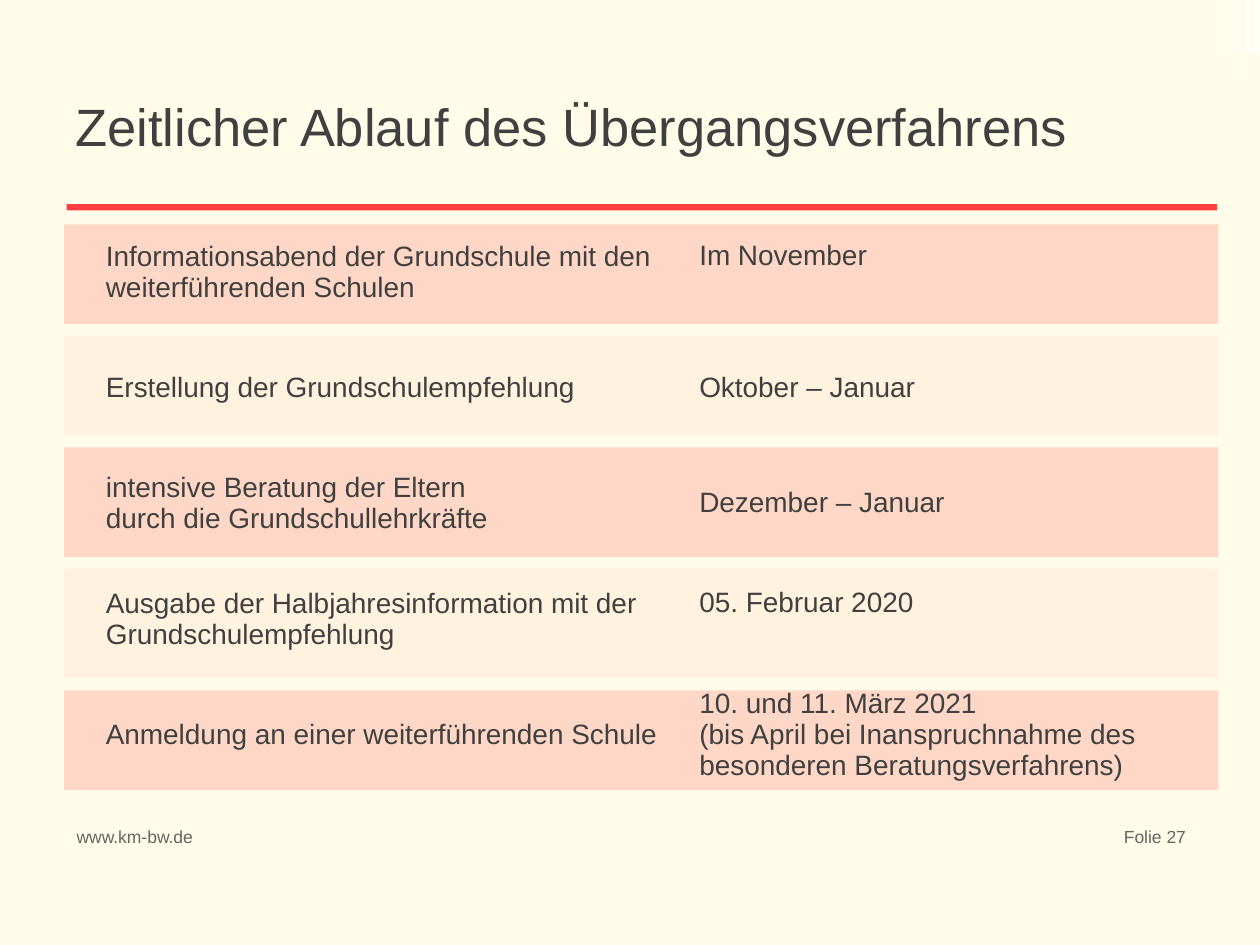
from pptx import Presentation
from pptx.dml.color import RGBColor
from pptx.enum.shapes import MSO_SHAPE
from pptx.enum.text import MSO_ANCHOR, PP_ALIGN
from pptx.oxml.ns import qn
from pptx.util import Inches, Pt
from lxml.etree import SubElement

HUES = {"page": "FFFDE9", "white": "FFFFFF", "red": "FF4040",
        "rose": "FF7F7F", "ink": "404040", "grey": "646464"}

deck = Presentation()
deck.slide_width, deck.slide_height = Inches(10), Inches(7.5)
slide = deck.slides.add_slide(deck.slide_layouts[5])
slide.background.fill.solid()
slide.background.fill.fore_color.rgb = RGBColor.from_string(HUES["page"])


def add_bar(left, top, width, height, hue, alpha=100):
    bar = slide.shapes.add_shape(MSO_SHAPE.RECTANGLE, *map(Inches, (left, top, width, height)))
    bar.shadow.inherit = False
    bar.line.fill.background()
    bar.fill.solid()
    bar.fill.fore_color.rgb = RGBColor.from_string(HUES[hue])
    if alpha < 100:
        tint = bar.fill._xPr.find(".//" + qn("a:srgbClr"))
        SubElement(tint, qn("a:alpha"), val=str(alpha * 1000))


def style(frame, size, hue, align=PP_ALIGN.LEFT):
    frame.word_wrap = True
    for para in frame.paragraphs:
        para.alignment = align
        for run in para.runs:
            run.font.name, run.font.size = "Arial", Pt(size)
            run.font.color.rgb = RGBColor.from_string(HUES[hue])


# Pale stripes in the top right corner
for left, width, height, alpha in [(9.89, 0.03, 0.43, 65), (9.94, 0.06, 0.43, 65),
                                   (9.7, 0.01, 0.64, 30), (9.87, 0.01, 0.68, 60),
                                   (9.75, 0.06, 0.43, 20), (9.82, 0.03, 0.43, 40)]:
    add_bar(left, 0, width, height, "white", alpha)

# Bands behind the rows, evenly spaced from first to last
bands = [0.79, 0.79, 0.87, 0.87, 0.79]
top, end = 1.78, 6.27
gap = (end - top - sum(bands)) / (len(bands) - 1)
for i, height in enumerate(bands):
    hue, alpha = [("red", 20), ("rose", 8)][i % 2]
    add_bar(0.51, top, 9.16, height, hue, alpha)
    top += height + gap

# Schedule: step and date
steps = [
    ("Informationsabend der Grundschule mit den weiterführenden Schulen", "Im November"),
    ("Erstellung der Grundschulempfehlung", "Oktober – Januar"),
    ("intensive Beratung der Eltern\ndurch die Grundschullehrkräfte", "Dezember – Januar"),
    ("Ausgabe der Halbjahresinformation mit der Grundschulempfehlung", "05. Februar 2020"),
    ("Anmeldung an einer weiterführenden Schule",
     "10. und 11. März 2021\n(bis April bei Inanspruchnahme des besonderen Beratungsverfahrens)"),
]
cols, pitch = (4.71, 4.03), 0.918
frame = slide.shapes.add_table(len(steps), len(cols), Inches(0.74), Inches(1.7),
                               Inches(sum(cols)), Inches(pitch * len(steps)))
table = frame.table
table.first_row = table.horz_banding = False
plain = "{2D5ABB26-0587-4C30-8999-92F81FD0307C}"  # no style, no grid
table._tbl.tblPr.find(qn("a:tableStyleId")).text = plain
for col, width in zip(table.columns, cols):
    col.width = Inches(width)
for i, texts in enumerate(steps):
    table.rows[i].height = Inches(pitch)
    for j, text in enumerate(texts):
        cell = table.cell(i, j)
        cell.fill.background()
        cell.vertical_anchor = MSO_ANCHOR.MIDDLE
        cell.text_frame.text = text
        style(cell.text_frame, 16, "ink")
# These dates sit level with the first line of their step
for i in (0, 3):
    table.cell(i, 1).margin_bottom = Inches(0.3)

# Footer
for text, left, width, align in [("www.km-bw.de", 0.51, 1.33, PP_ALIGN.LEFT),
                                 ("Folie 27", 8.54, 0.97, PP_ALIGN.RIGHT)]:
    box = slide.shapes.add_textbox(Inches(left), Inches(6.51), Inches(width), Inches(0.39))
    box.text_frame.text = text
    style(box.text_frame, 10, "grey", align)

# Title and rule
title = slide.shapes.title
title.left, title.top, title.width, title.height = map(Inches, (0.5, 0.61, 9, 0.77))
title.text_frame.text = "Zeitlicher Ablauf des Übergangsverfahrens"
title.text_frame.vertical_anchor = MSO_ANCHOR.MIDDLE
style(title.text_frame, 30, "ink")
add_bar(0.53, 1.62, 9.13, 0.05, "red")

deck.save("out.pptx")
